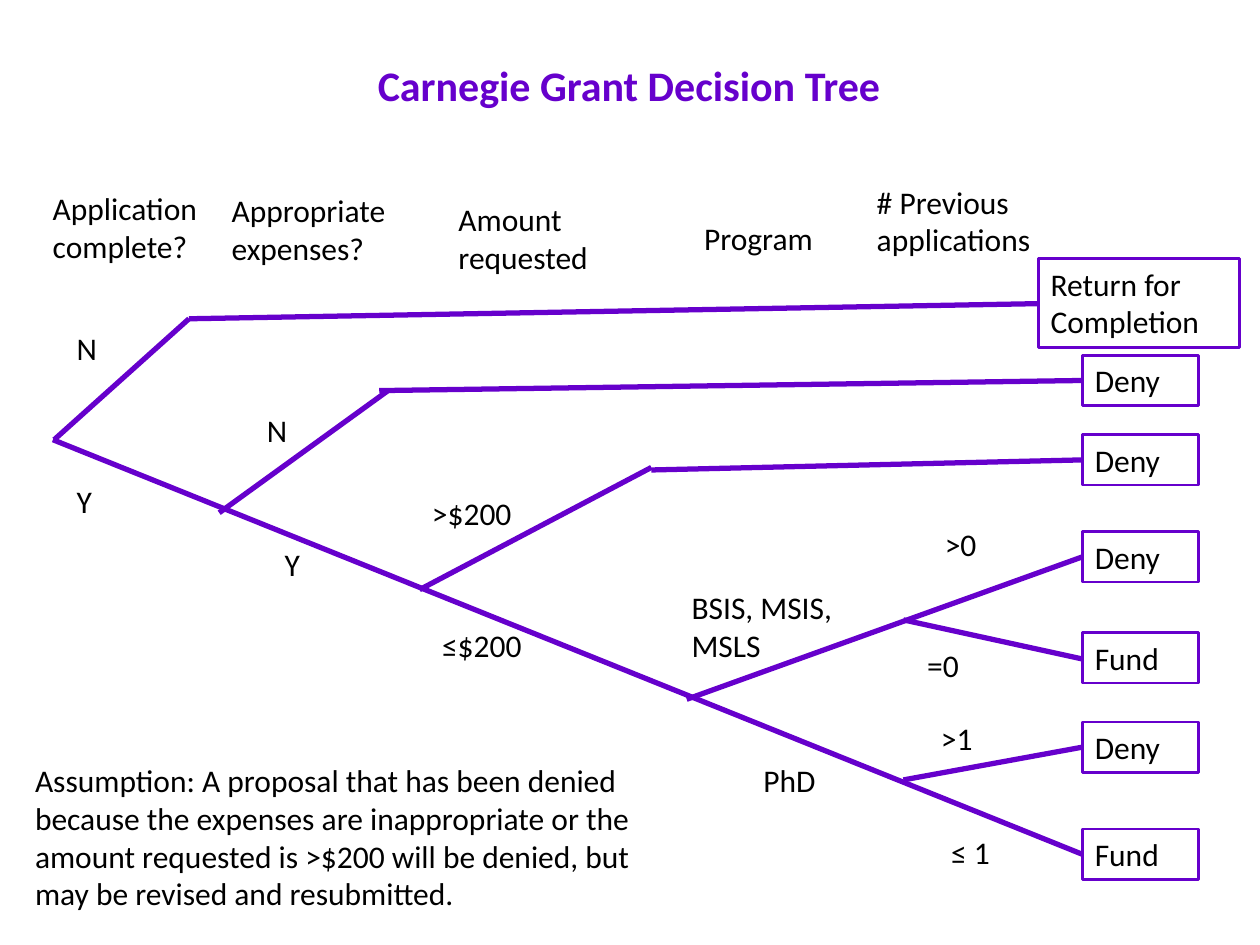
from dataclasses import dataclass

from lxml.etree import SubElement
from pptx import Presentation
from pptx.dml.color import RGBColor
from pptx.enum.shapes import MSO_CONNECTOR as Connector, MSO_SHAPE as Shape
from pptx.enum.text import MSO_ANCHOR as Anchor, MSO_AUTO_SIZE as AutoSize, PP_ALIGN as Align
from pptx.oxml.ns import qn
from pptx.util import Pt

PX = 9144  # EMU per px, 100 px to the inch


@dataclass(frozen=True)
class Theme:
    font: str = "Calibri"
    accent: RGBColor = RGBColor(0x66, 0x00, 0xCC)
    ink: RGBColor = RGBColor(0x00, 0x00, 0x00)
    title_size: int = 24
    body_size: int = 18
    branch_width: float = 3
    border_width: float = 1.5


class TreeSlide:
    def __init__(self, page, theme):
        self.page = page
        self.theme = theme

    def set_text(self, box, text, size, color, bold=False):
        frame = box.text_frame
        frame.word_wrap = True
        frame.auto_size = AutoSize.SHAPE_TO_FIT_TEXT
        frame.vertical_anchor = Anchor.TOP
        frame.text = text
        for para in frame.paragraphs:
            para.alignment = Align.LEFT
            para.font.name = self.theme.font
            para.font.size = Pt(size)
            para.font.bold = bold
            para.font.color.rgb = color

    def title(self, text, *place):
        box = self.page.shapes.add_textbox(*(PX * n for n in place))
        self.set_text(box, text, self.theme.title_size, self.theme.accent, bold=True)

    def label(self, text, *place):
        box = self.page.shapes.add_textbox(*(PX * n for n in place))
        self.set_text(box, text, self.theme.body_size, self.theme.ink)

    def outcome(self, text, *place):
        box = self.page.shapes.add_shape(Shape.RECTANGLE, *(PX * n for n in place))
        box.shadow.inherit = False
        box.fill.background()
        box.line.color.rgb = self.theme.accent
        box.line.width = Pt(self.theme.border_width)
        self.set_text(box, text, self.theme.body_size, self.theme.ink)

    def branch(self, *ends):
        line = self.page.shapes.add_connector(Connector.STRAIGHT, *(PX * n for n in ends))
        line.line.color.rgb = self.theme.accent
        line.line.width = Pt(self.theme.branch_width)
        SubElement(line._element.spPr, qn("a:effectLst"))


# Column headings: text, left, top, width, height
HEADINGS = [
    ("Application complete?", 32, 145, 142, 71),
    ("Appropriate\nexpenses?", 174, 147, 167, 71),
    ("Amount\nrequested", 354, 154, 125, 71),
    ("Program", 549, 169, 142, 40),
    ("# Previous\napplications", 686, 140, 158, 71),
]

# Branch answers: text, left, top, width
ANSWERS = [
    ("N", 51, 256, 35),
    ("Y", 51, 378, 35),
    ("N", 202, 321, 35),
    ("Y", 216, 428, 35),
    (">$200", 333, 387, 92),
    ("≤$200", 341, 492, 92),
    ("PhD", 596, 599, 70),
    (">0", 740, 412, 50),
    ("=0", 726, 508, 57),
    (">1", 737, 566, 53),
    ("≤ 1", 745, 656, 60),
]

OUTCOME_LEFT, OUTCOME_WIDTH, ROW = 859, 92, 40

# Outcome boxes in the right-hand column: text, top
OUTCOMES = [("Deny", 282), ("Deny", 345), ("Deny", 422),
            ("Fund", 502), ("Deny", 573), ("Fund", 658)]

# Branches: start x, start y, end x, end y
BRANCHES = [
    (42, 349, OUTCOME_LEFT, 678),  # trunk
    (43, 349, 150, 253),
    (150, 253, 824, 241),
    (174, 407, 308, 310),
    (301, 310, OUTCOME_LEFT, 302),
    (333, 468, 517, 371),
    (517, 373, OUTCOME_LEFT, 365),
    (545, 555, OUTCOME_LEFT, 442),
    (717, 492, OUTCOME_LEFT, 523),
    (717, 619, OUTCOME_LEFT, 593),
]


def main():
    deck = Presentation()
    deck.slide_width, deck.slide_height = 1000 * PX, 750 * PX
    tree = TreeSlide(deck.slides.add_slide(deck.slide_layouts[6]), Theme())

    # Title and column headings
    tree.title("Carnegie Grant Decision Tree", 290, 42, 420, 50)
    for heading in HEADINGS:
        tree.label(*heading)

    # Tree
    for ends in BRANCHES:
        tree.branch(*ends)
    for answer in ANSWERS:
        tree.label(*answer, ROW)
    tree.label("BSIS, MSIS, MSLS", 539, 462, 142, 71)

    # Outcomes
    tree.outcome("Return for\nCompletion", 824, 205, 160, 71)
    for text, top in OUTCOMES:
        tree.outcome(text, OUTCOME_LEFT, top, OUTCOME_WIDTH, ROW)

    # Footnote
    tree.label("Assumption: A proposal that has been denied because the expenses are "
               "inappropriate or the amount requested is >$200 will be denied, but "
               "may be revised and resubmitted.", 18, 599, 500, 131)

    deck.save("out.pptx")


if __name__ == "__main__":
    main()
